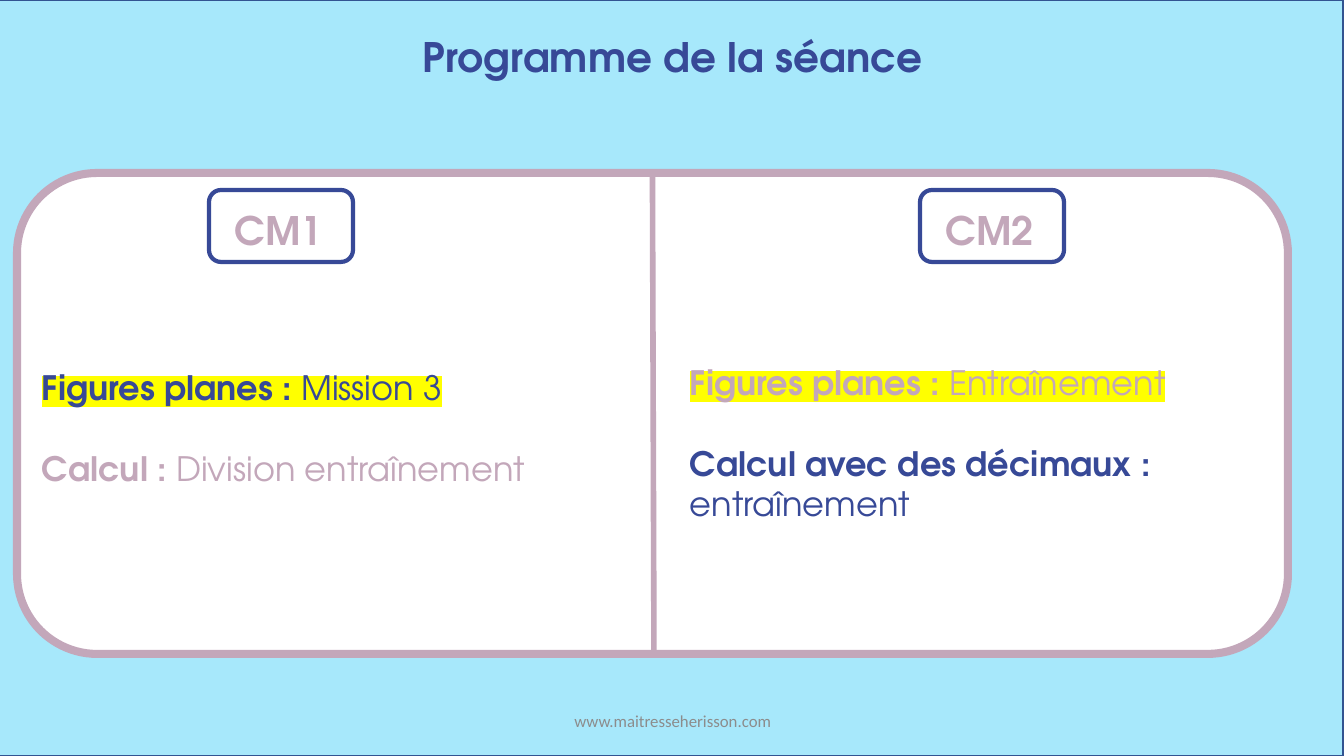
from lxml.etree import SubElement
from pptx import Presentation
from pptx.dml.color import RGBColor
from pptx.enum.shapes import MSO_CONNECTOR, MSO_SHAPE
from pptx.enum.text import MSO_ANCHOR, MSO_AUTO_SIZE, PP_ALIGN
from pptx.oxml.ns import qn
from pptx.util import Emu, Pt

EMU_PER_PX = 914400 / 100.8
SKY = RGBColor(0xA7, 0xE8, 0xFB)
FRAME = RGBColor(0x32, 0x54, 0x91)
NAVY = RGBColor(0x37, 0x49, 0x97)
MAUVE = RGBColor(0xC3, 0xA7, 0xBA)
GREY = RGBColor(0x8C, 0x8C, 0x8C)
WHITE = RGBColor(0xFF, 0xFF, 0xFF)
HIGHLIGHT = "FFFF00"
FONT = "TeX Gyre Adventor"

# Each level: label, badge left, lesson box, lessons (heading, detail, colour, highlighted)
LEVELS = [
    ("CM2", 920, (680, 357, 579, 214), [
        ("Figures planes : ", "Entraînement", MAUVE, True),
        ("Calcul avec des décimaux : ", "entraînement", NAVY, False)]),
    ("CM1", 209, (32, 362, 609, 173), [
        ("Figures planes : ", "Mission 3", NAVY, True),
        ("Calcul : ", "Division entraînement", MAUVE, False)]),
]


def px(length):
    return Emu(round(length * EMU_PER_PX))


def scaled(box):
    return [px(length) for length in box]


def add_panel(shapes, kind, box, fill, line, width):
    shape = shapes.add_shape(kind, *scaled(box))
    shape.shadow.inherit = False
    shape.fill.solid()
    shape.fill.fore_color.rgb = fill
    shape.line.color.rgb = line
    shape.line.width = Pt(width)
    return shape


def add_run(paragraph, text, color, highlighted=False, **formats):
    run = paragraph.add_run()
    run.text = text
    for name, value in {"name": FONT, "bold": True, **formats}.items():
        setattr(run.font, name, value)
    run.font.color.rgb = color
    if highlighted:
        properties = run._r.get_or_add_rPr()
        highlight = SubElement(properties, qn("a:highlight"))
        SubElement(highlight, qn("a:srgbClr"), val=HIGHLIGHT)
        properties.find(qn("a:solidFill")).addnext(highlight)


def format_frame(shape, **formats):
    frame = shape.text_frame
    defaults = {"word_wrap": True, "auto_size": MSO_AUTO_SIZE.NONE,
                "vertical_anchor": MSO_ANCHOR.TOP}
    for name, value in {**defaults, **formats}.items():
        setattr(frame, name, value)
    return frame


def add_background(slide, box):
    background = add_panel(slide.shapes, MSO_SHAPE.RECTANGLE, box, SKY, FRAME, 1)
    # Place it behind the title
    slide.shapes.title.element.addprevious(background.element)


def add_title(slide, box):
    title = slide.shapes.title
    for name, value in zip(("left", "top", "width", "height"), scaled(box)):
        setattr(title, name, value)
    paragraph = format_frame(title).paragraphs[0]
    paragraph.alignment = PP_ALIGN.CENTER
    add_run(paragraph, "Programme de la séance", NAVY, size=Pt(29))


def add_board(slide, box):
    left, top, width, height = box
    board = add_panel(slide.shapes, MSO_SHAPE.ROUNDED_RECTANGLE, box, WHITE, MAUVE, 5.75)
    middle = left + width // 2
    divider = slide.shapes.add_connector(
        MSO_CONNECTOR.STRAIGHT, *scaled((middle, top, middle + 2, top + height)))
    divider.begin_connect(board, 0)
    divider.line.color.rgb = MAUVE
    divider.line.width = Pt(4)
    SubElement(divider.element.spPr, qn("a:effectLst"))


def add_badge(slide, label, box):
    left, top, width, height = box
    shapes = slide.shapes.add_group_shape().shapes
    add_panel(shapes, MSO_SHAPE.ROUNDED_RECTANGLE, box, WHITE, NAVY, 3)
    text_box = shapes.add_textbox(*scaled((left + 16, top + 11, width - 33, height - 15)))
    add_run(format_frame(text_box).paragraphs[0], label, MAUVE, size=Pt(28))


def add_lessons(slide, lessons, box):
    frame = format_frame(slide.shapes.add_textbox(*scaled(box)))
    for index, (heading, detail, color, highlighted) in enumerate(lessons):
        paragraph = frame.add_paragraph() if index else frame.paragraphs[0]
        if index:
            paragraph.space_before = Pt(29)
        add_run(paragraph, heading, color, highlighted, size=Pt(24))
        add_run(paragraph, detail, color, highlighted, size=Pt(24), bold=False)


def add_footer(slide, box):
    text_box = slide.shapes.add_textbox(*scaled(box))
    paragraph = format_frame(text_box, vertical_anchor=MSO_ANCHOR.MIDDLE).paragraphs[0]
    paragraph.alignment = PP_ALIGN.CENTER
    add_run(paragraph, "www.maitresseherisson.com", GREY,
            name="Calibri", size=Pt(12), bold=False)


def main():
    presentation = Presentation()
    presentation.slide_width, presentation.slide_height = scaled((1344, 756))
    slide = presentation.slides.add_slide(presentation.slide_layouts[5])
    add_background(slide, (-1, 0, 1344, 756))
    add_title(slide, (1, 27, 1344, 59))
    add_board(slide, (17, 173, 1271, 481))
    for label, badge_left, lesson_box, lessons in LEVELS:
        add_badge(slide, label, (badge_left, 190, 144, 72))
        add_lessons(slide, lessons, lesson_box)
    add_footer(slide, (446, 701, 454, 40))
    presentation.save("out.pptx")


if __name__ == "__main__":
    main()
